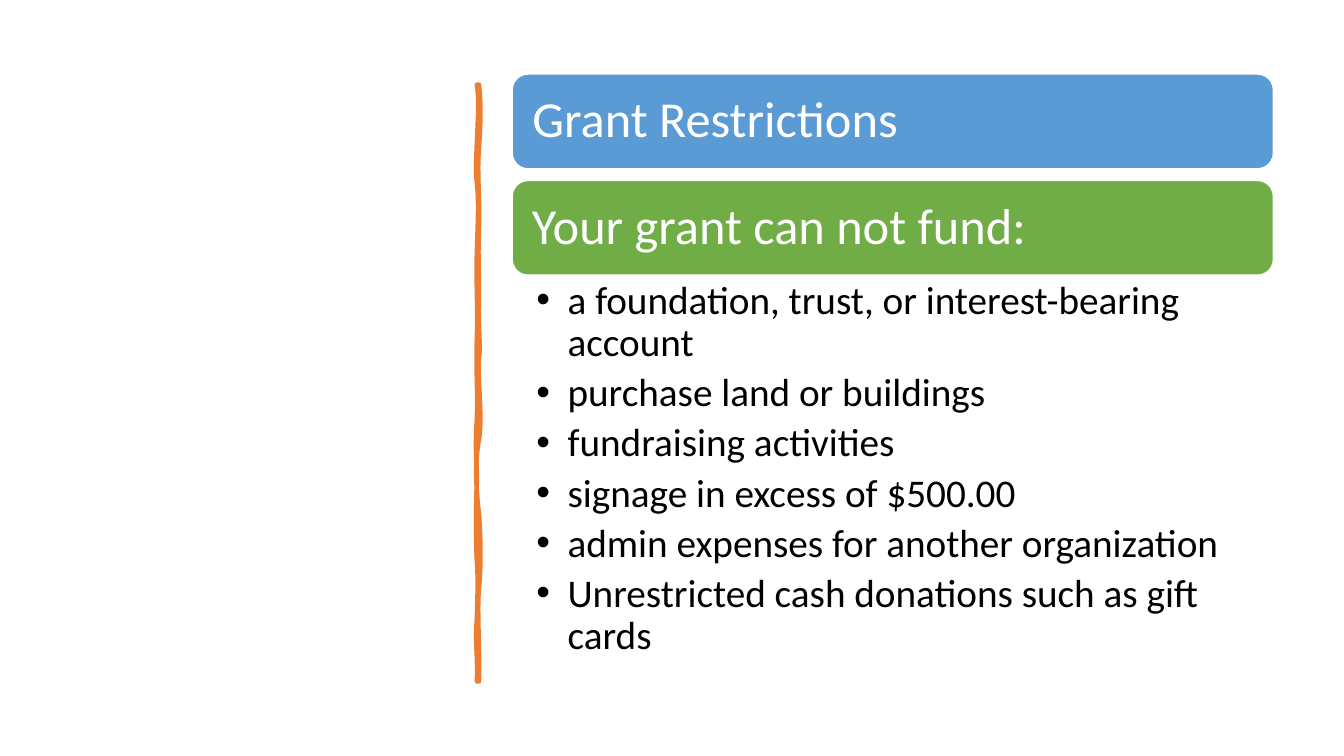
import lxml.etree
import pptx
import pptx.dml.color
import pptx.enum.shapes
import pptx.enum.text
import pptx.oxml.ns
import pptx.util

Inches = pptx.util.Inches
Pt = pptx.util.Pt
qn = pptx.oxml.ns.qn
Anchor = pptx.enum.text.MSO_ANCHOR

COLORS = {"blue": "5B9BD5", "green": "70AD47", "orange": "ED7D31",
          "white": "FFFFFF", "black": "000000"}
LEFT, WIDTH, BAR = 5.08, 7.55, 0.94
ITEMS = ["a foundation, trust, or interest-bearing account",
         "purchase land or buildings",
         "fundraising activities",
         "signage in excess of $500.00",
         "admin expenses for another organization",
         "Unrestricted cash donations such as gift cards"]

# Each curve of the hand-drawn rule: two control points and the end point
CURVES = [
    (4.77, 1.02, 4.77, 1.19, 4.75, 1.46), (4.73, 1.73, 4.76, 1.95, 4.75, 2.26),
    (4.74, 2.57, 4.75, 2.62, 4.75, 2.94), (4.74, 3.25, 4.77, 3.42, 4.75, 3.56),
    (4.73, 3.7, 4.79, 4.14, 4.75, 4.36), (4.71, 4.57, 4.72, 4.84, 4.75, 5.1),
    (4.77, 5.36, 4.77, 5.64, 4.75, 5.84), (4.73, 6.03, 4.76, 6.5, 4.75, 6.76),
    (4.74, 6.76, 4.73, 6.76, 4.73, 6.76), (4.74, 6.46, 4.71, 6.44, 4.73, 6.13),
    (4.74, 5.83, 4.74, 5.7, 4.73, 5.57), (4.72, 5.44, 4.72, 4.95, 4.73, 4.77),
    (4.73, 4.59, 4.71, 4.45, 4.73, 4.15), (4.74, 3.86, 4.72, 3.73, 4.73, 3.35),
    (4.74, 2.98, 4.72, 2.81, 4.73, 2.5), (4.74, 2.18, 4.75, 2, 4.73, 1.81),
    (4.7, 1.63, 4.77, 1.04, 4.73, 0.84)]


def paint(shape, fill, line, width):
    shape.shadow.inherit = False
    shape.fill.solid()
    shape.fill.fore_color.rgb = pptx.dml.color.RGBColor.from_string(COLORS[fill])
    shape.line.color.rgb = pptx.dml.color.RGBColor.from_string(COLORS[line])
    shape.line.width = Pt(width)


def write(shape, lines, size, color, after, anchor, insets):
    """Fill the text frame with one paragraph per line, all in one style."""
    frame = shape.text_frame
    frame.text = "\n".join(lines)
    frame.word_wrap = True
    frame.auto_size = pptx.enum.text.MSO_AUTO_SIZE.NONE
    frame.vertical_anchor = anchor
    (frame.margin_left, frame.margin_top,
     frame.margin_right, frame.margin_bottom) = map(Inches, insets)
    for para in frame.paragraphs:
        para.alignment = pptx.enum.text.PP_ALIGN.LEFT
        para.line_spacing = 0.9
        para.space_before = Pt(0)
        para.space_after = Pt(after)
        para.font.name = "Calibri"
        para.font.size = Pt(size)
        para.font.color.rgb = pptx.dml.color.RGBColor.from_string(COLORS[color])


deck = pptx.Presentation()
deck.slide_width = Inches(13.33)
deck.slide_height = Inches(7.5)
slide = deck.slides.add_slide(deck.slide_layouts[1])
shapes = slide.shapes
title, body = slide.placeholders

# Orange rule: straight segments first, then each one bent into its curve
pen = shapes.build_freeform(Inches(4.75), Inches(0.84))
pen.add_line_segments([(Inches(x), Inches(y)) for *_, x, y in CURVES])
rule = pen.convert_to_shape()
paint(rule, "orange", "orange", 3.25)
for line, curve in zip(list(rule.element.iter(qn("a:lnTo"))), CURVES):
    bend = lxml.etree.Element(qn("a:cubicBezTo"))
    for x, y in zip(curve[::2], curve[1::2]):
        lxml.etree.SubElement(bend, qn("a:pt"), x=str(Inches(x) - rule.left),
                              y=str(Inches(y) - rule.top))
    line.getparent().replace(line, bend)

# Heading bars
bars = []
for top, fill in ((0.735, "blue"), (1.79, "green")):
    bar = shapes.add_shape(pptx.enum.shapes.MSO_SHAPE.ROUNDED_RECTANGLE,
                           Inches(LEFT), Inches(top), Inches(WIDTH), Inches(BAR))
    paint(bar, fill, "white", 1)
    bars.append(bar)
insets = (0.15, 0.15, 0.15, 0.15)
write(bars[1], ["Your grant can not fund:"], 36, "white", 0, Anchor.MIDDLE, insets)

# The title lies on top of the blue bar
shapes.element.append(title.element)
title.left, title.top = Inches(LEFT + 0.05), Inches(0.78)
title.width, title.height = Inches(WIDTH - 0.1), Inches(0.85)
write(title, ["Grant Restrictions"], 36, "white", 0, Anchor.MIDDLE, insets)

# Restrictions list
body.left, body.top = Inches(LEFT), Inches(2.73)
body.width, body.height = Inches(WIDTH), Inches(3.99)
write(body, ITEMS, 28, "black", 5.6, Anchor.TOP, (0.24, 0.05, 0.28, 0.05))
for para in body.text_frame.paragraphs:
    props = para._p.get_or_add_pPr()
    props.set("marL", str(Inches(0.31)))
    props.set("indent", str(-Inches(0.31)))

deck.save("out.pptx")
